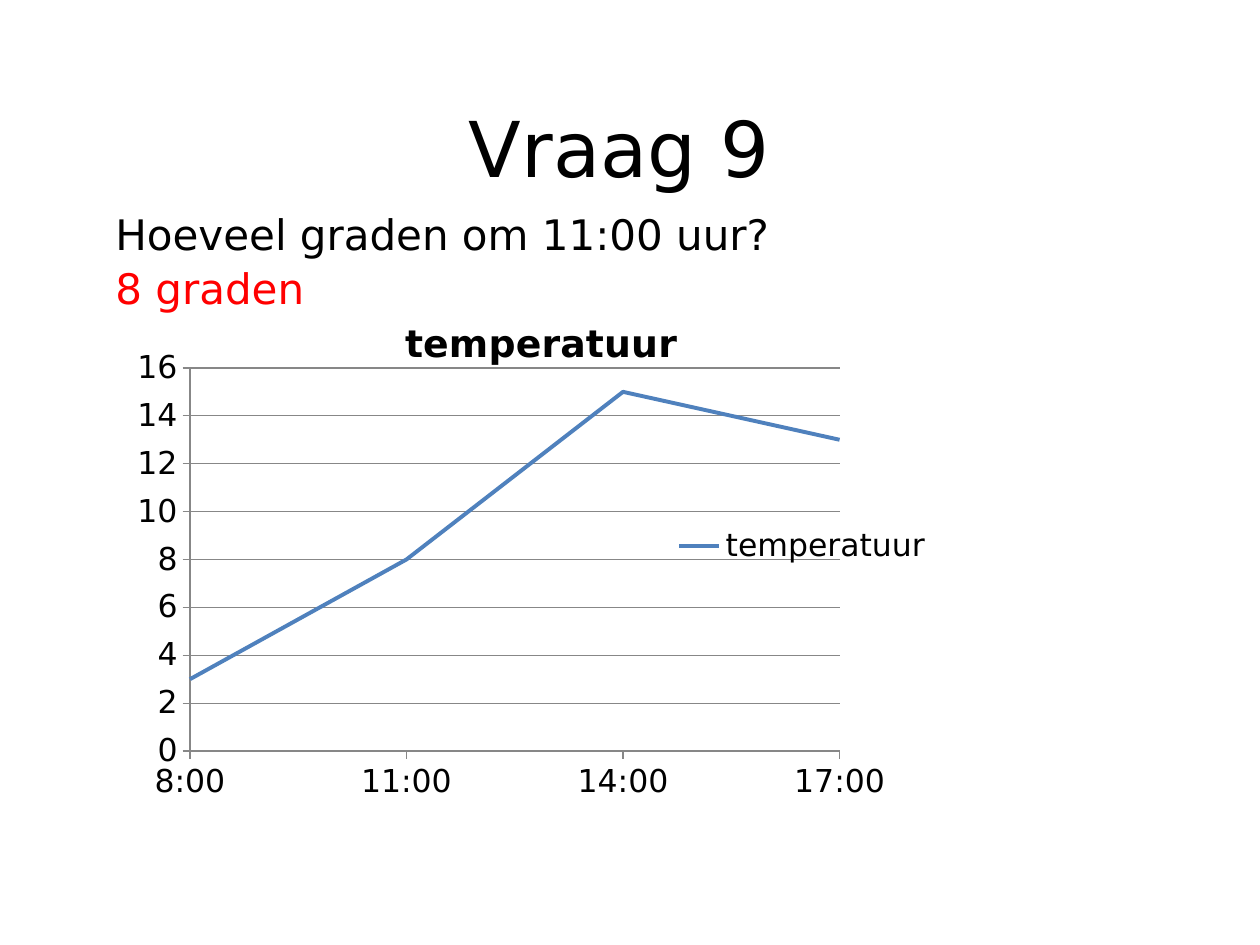
import pptx
import pptx.chart.data
import pptx.dml.color
import pptx.enum.chart
import pptx.enum.shapes
import pptx.enum.text
import pptx.oxml
import pptx.oxml.ns
import pptx.util

PX = 914400 // 126
FONT = "DejaVu Sans"
BLACK, WHITE, RED, BLUE, GREY = "000000", "FFFFFF", "FF0000", "4F81BD", "878787"


def px(length):
    return pptx.util.Emu(length * PX)


def color(value):
    return pptx.dml.color.RGBColor.from_string(value)


def style_font(font, size, value, bold=False):
    font.name = FONT
    font.size = pptx.util.Pt(size)
    font.bold = bold
    font.color.rgb = color(value)


def add_run(para, text, size, value):
    span = para.add_run()
    span.text = text
    style_font(span.font, size, value)


def set_title(page, text):
    title = page.shapes.title
    title.left, title.top, title.width, title.height = map(px, (84, 45, 1071, 203))
    frame = title.text_frame
    frame.vertical_anchor = pptx.enum.text.MSO_ANCHOR.MIDDLE
    para = frame.paragraphs[0]
    para.alignment = pptx.enum.text.PP_ALIGN.CENTER
    add_run(para, text, 44, BLACK)


def add_question(page, lines):
    box = page.shapes.add_shape(
        pptx.enum.shapes.MSO_SHAPE.RECTANGLE, px(54), px(208), px(1121), px(632))
    box.shadow.inherit = False
    box.line.fill.background()
    box.fill.solid()
    box.fill.fore_color.rgb = color(WHITE)
    shade = box.fill._xPr.find(".//" + pptx.oxml.ns.qn("a:srgbClr"))
    shade.append(pptx.oxml.parse_xml(
        f'<a:alpha {pptx.oxml.ns.nsdecls("a")} val="76000"/>'))
    frame = box.text_frame
    frame.word_wrap = True
    frame.vertical_anchor = pptx.enum.text.MSO_ANCHOR.TOP
    for index, (text, value) in enumerate(lines):
        para = frame.add_paragraph() if index else frame.paragraphs[0]
        para.alignment = pptx.enum.text.PP_ALIGN.LEFT
        para.line_spacing = 0.9
        para.space_before = pptx.util.Pt(4.8 if index else 0)
        properties = para._p.get_or_add_pPr()
        properties.set("marL", str(px(26)))
        properties.set("indent", str(px(23)))
        add_run(para, text, 24, value)


def place(element, inner=False, **fractions):
    """Give a chart part a manual layout, in fractions of the chart."""
    layout = element.find(pptx.oxml.ns.qn("c:layout"))
    if layout is None:
        layout = pptx.oxml.parse_xml(f'<c:layout {pptx.oxml.ns.nsdecls("c")}/>')
        first = {"title": "c:tx", "legend": "c:legendPos"}.get(element.tag.split("}")[1])
        position = 0 if first is None else element.index(
            element.find(pptx.oxml.ns.qn(first))) + 1
        element.insert(position, layout)
    for child in list(layout):
        layout.remove(child)
    parts = '<c:layoutTarget val="inner"/>' if inner else ""
    parts += '<c:xMode val="edge"/><c:yMode val="edge"/>'
    parts += "".join(f'<c:{key} val="{value}"/>' for key, value in fractions.items())
    layout.append(pptx.oxml.parse_xml(
        f'<c:manualLayout {pptx.oxml.ns.nsdecls("c")}>{parts}</c:manualLayout>'))


def style_axis(axis):
    axis.major_tick_mark = pptx.enum.chart.XL_TICK_MARK.OUTSIDE
    axis.minor_tick_mark = pptx.enum.chart.XL_TICK_MARK.NONE
    axis.format.line.color.rgb = color(GREY)
    axis.format.line.width = pptx.util.Pt(0.75)


def add_temperature_chart(page, name, hours, degrees):
    data = pptx.chart.data.CategoryChartData()
    data.categories = hours
    data.add_series(name, degrees)
    chart = page.shapes.add_chart(
        pptx.enum.chart.XL_CHART_TYPE.LINE,
        px(115), px(284), px(833), px(525), data).chart
    style_font(chart.font, 18, BLACK)

    chart.has_title = True
    para = chart.chart_title.text_frame.paragraphs[0]
    span = para.add_run()
    span.text = name
    style_font(span.font, 21.6, BLACK, bold=True)
    chart.chart_title.include_in_layout = False
    place(chart.chart_title._element, x=0.34, y=0.05)

    chart.has_legend = True
    chart.legend.position = pptx.enum.chart.XL_LEGEND_POSITION.RIGHT
    chart.legend.include_in_layout = False
    place(chart.legend._element, x=0.67, y=0.46, w=0.31, h=0.08)

    style_axis(chart.category_axis)
    values = chart.value_axis
    style_axis(values)
    values.minimum_scale, values.maximum_scale, values.major_unit = 0, 16, 2
    values.has_major_gridlines = True
    values.major_gridlines.format.line.color.rgb = color(GREY)
    values.major_gridlines.format.line.width = pptx.util.Pt(0.75)
    crossing = values._element.find(pptx.oxml.ns.qn("c:crossBetween"))
    if crossing is None:
        crossing = pptx.oxml.parse_xml(
            f'<c:crossBetween {pptx.oxml.ns.nsdecls("c")}/>')
        values._element.find(pptx.oxml.ns.qn("c:crosses")).addnext(crossing)
    crossing.set("val", "midCat")

    plot = chart.plots[0]
    plot.vary_by_categories = False
    place(plot._element.getparent(), inner=True, x=0.09, y=0.16, w=0.78, h=0.73)
    series = plot.series[0]
    series.smooth = False
    series.marker.style = pptx.enum.chart.XL_MARKER_STYLE.NONE
    series.format.line.color.rgb = color(BLUE)
    series.format.line.width = pptx.util.Pt(2.25)


def main():
    deck = pptx.Presentation()
    deck.slide_width, deck.slide_height = px(1260), px(945)
    page = deck.slides.add_slide(deck.slide_layouts[5])
    set_title(page, "Vraag 9")
    add_question(page, [("Hoeveel graden om 11:00 uur?", BLACK), ("8 graden", RED)])
    add_temperature_chart(
        page, "temperatuur", ["8:00", "11:00", "14:00", "17:00"], [3, 8, 15, 13])
    deck.save("out.pptx")


if __name__ == "__main__":
    main()
